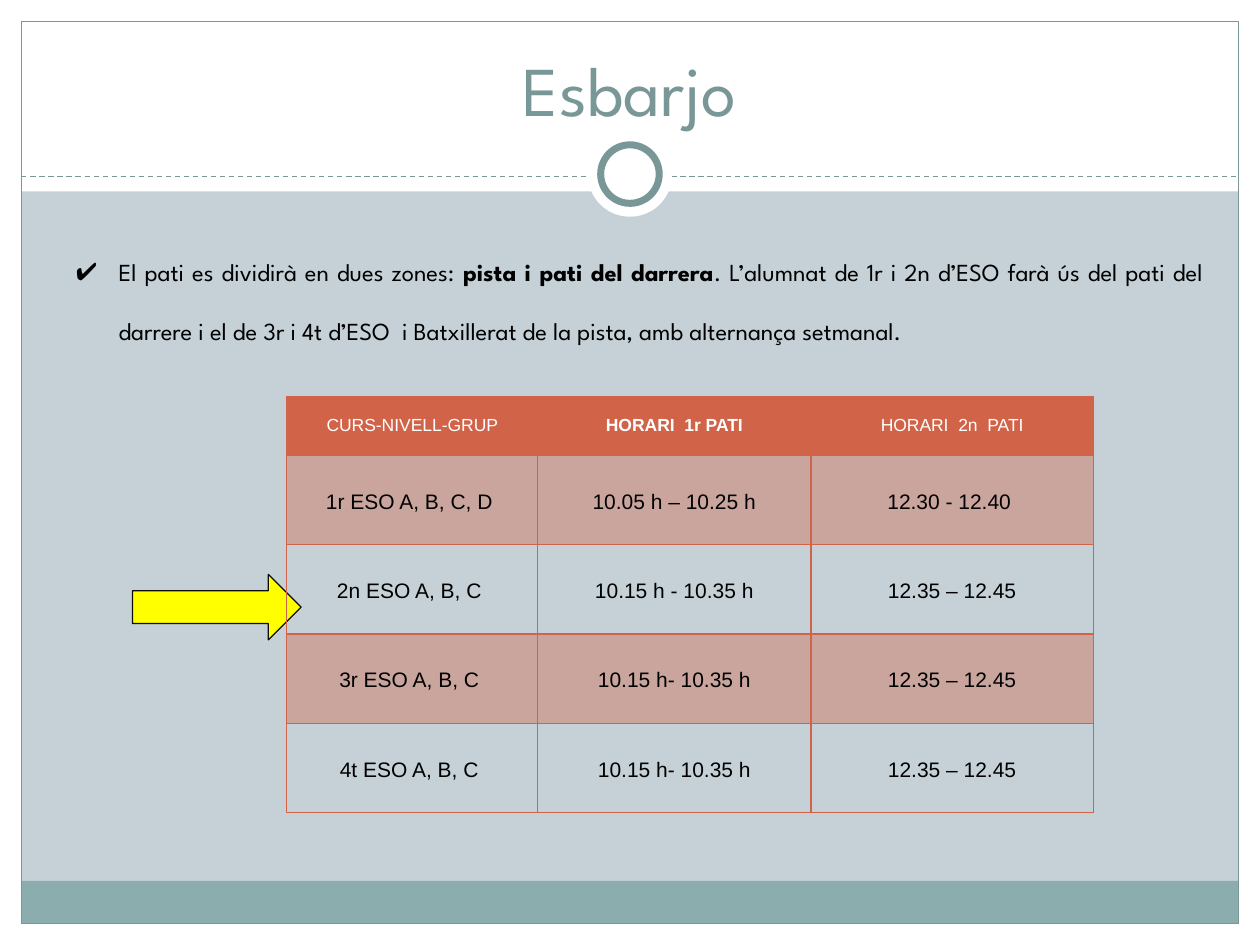
from lxml.etree import SubElement
from pptx import Presentation
from pptx.dml.color import RGBColor
from pptx.enum.dml import MSO_LINE
from pptx.enum.shapes import MSO_CONNECTOR, MSO_SHAPE
from pptx.enum.text import MSO_ANCHOR, PP_ALIGN
from pptx.oxml.ns import qn
from pptx.util import Cm, Pt

COLORS = {
    "background": "C5D1D7", "white": "FFFFFF", "teal": "7A9798", "footer": "8CADAE",
    "black": "000000", "yellow": "FFFF00", "outline": "0C0C0C", "accent": "D16349",
}
HEADING_FONT = "League Spartan"
TABLE_FONT = "Arial"
WIDTH, HEIGHT, MARGIN = 25.4, 19.05, 0.43

HEADERS = ["CURS-NIVELL-GRUP", "HORARI  1r PATI", "HORARI  2n  PATI"]
ROWS = [
    ["1r ESO A, B, C, D ", "10.05 h – 10.25 h", "12.30 - 12.40 "],
    ["2n ESO A, B, C ", "10.15 h - 10.35 h", "12.35 – 12.45"],
    ["3r ESO A, B, C ", "10.15 h- 10.35 h", "12.35 – 12.45"],
    ["4t ESO A, B, C ", "10.15 h- 10.35 h", "12.35 – 12.45"],
]


def color(name):
    return RGBColor.from_string(COLORS[name])


def add_span(para, text, font, size, fill, bold=False):
    span = para.add_run()
    span.text = text
    span.font.name, span.font.size, span.font.bold = font, Pt(size), bold
    span.font.color.rgb = color(fill)


def add_figure(page, kind, left, top, width, height, fill=None, line=None, weight=0.75):
    figure = page.shapes.add_shape(kind, Cm(left), Cm(top), Cm(width), Cm(height))
    figure.shadow.inherit = False
    if fill:
        figure.fill.solid()
        figure.fill.fore_color.rgb = color(fill)
    else:
        figure.fill.background()
    if line:
        figure.line.color.rgb = color(line)
        figure.line.width = Pt(weight)
    else:
        figure.line.fill.background()


def add_dashed_line(page, left, right, top):
    line = page.shapes.add_connector(
        MSO_CONNECTOR.STRAIGHT, Cm(left), Cm(top), Cm(right), Cm(top))
    line.line.color.rgb = color("teal")
    line.line.width = Pt(0.75)
    line.line.dash_style = MSO_LINE.DASH
    SubElement(line.element.spPr, qn("a:effectLst"))


def add_decoration(page):
    # White margins around the page
    for box in [
        (0, HEIGHT - MARGIN, WIDTH, MARGIN), (0, 0, WIDTH, 3.86),
        (0, 0, MARGIN, HEIGHT), (WIDTH - MARGIN, 0, MARGIN, HEIGHT),
    ]:
        add_figure(page, MSO_SHAPE.RECTANGLE, *box, fill="white")
    # Footer band, frame and divider with its ring
    inner_width = WIDTH - 2 * MARGIN
    add_figure(page, MSO_SHAPE.RECTANGLE, MARGIN, 17.76, inner_width, 0.86, fill="footer")
    add_figure(page, MSO_SHAPE.RECTANGLE, MARGIN, MARGIN, inner_width,
               HEIGHT - 2 * MARGIN, line="teal")
    add_dashed_line(page, MARGIN, WIDTH - MARGIN, 3.56)
    add_figure(page, MSO_SHAPE.OVAL, 11.85, 2.67, 1.7, 1.7, fill="white")
    add_figure(page, MSO_SHAPE.OVAL, 12.11, 2.92, 1.18, 1.18,
               fill="white", line="teal", weight=4)


def add_title(page, text):
    title = page.shapes.title
    title.left, title.top, title.width, title.height = Cm(0.84), Cm(0.64), Cm(23.7), Cm(2.11)
    title.text_frame.vertical_anchor = MSO_ANCHOR.BOTTOM
    para = title.text_frame.paragraphs[0]
    para.alignment = PP_ALIGN.CENTER
    add_span(para, text, HEADING_FONT, 40, "teal")
    # Bring the title in front of the decoration
    title.element.getparent().append(title.element)


def add_check_item(page, left, top, width, height, spans):
    box = page.shapes.add_textbox(Cm(left), Cm(top), Cm(width), Cm(height))
    box.text_frame.word_wrap = True
    para = box.text_frame.paragraphs[0]
    para.alignment, para.line_spacing = PP_ALIGN.JUSTIFY, 2.0
    properties = para._p.get_or_add_pPr()
    properties.set("marL", str(Cm(1.25)))
    properties.set("indent", str(Cm(-0.86)))
    bullet_color = SubElement(properties, qn("a:buClr"))
    SubElement(bullet_color, qn("a:srgbClr"), val=COLORS["black"])
    SubElement(properties, qn("a:buFont"), typeface=TABLE_FONT)
    SubElement(properties, qn("a:buChar"), char="✔")
    for text, bold in spans:
        add_span(para, text, HEADING_FONT, 14, "black", bold)


def add_borders(cell):
    properties = cell._tc.get_or_add_tcPr()
    for side in ("lnL", "lnR", "lnT", "lnB"):
        border = SubElement(properties, qn(f"a:{side}"), w=str(Pt(0.75)))
        fill = SubElement(border, qn("a:solidFill"))
        SubElement(fill, qn("a:srgbClr"), val=COLORS["accent"])


def format_cell(cell, text, size, font_color, bold=False, opacity=100, spacing=1.0):
    add_borders(cell)
    cell.margin_left = cell.margin_right = Cm(0.18)
    cell.margin_top = cell.margin_bottom = 0
    cell.vertical_anchor = MSO_ANCHOR.MIDDLE
    if opacity:
        cell.fill.solid()
        cell.fill.fore_color.rgb = color("accent")
        tint = cell._tc.tcPr.find(qn("a:solidFill")).find(qn("a:srgbClr"))
        SubElement(tint, qn("a:alpha"), val=str(opacity * 1000))
    else:
        cell.fill.background()
    para = cell.text_frame.paragraphs[0]
    para.alignment, para.line_spacing = PP_ALIGN.CENTER, spacing
    add_span(para, text, TABLE_FONT, size, font_color, bold)


def add_timetable(page, left, top, widths, header_height, row_height):
    frame = page.shapes.add_table(
        len(ROWS) + 1, len(HEADERS), Cm(left), Cm(top), Cm(sum(widths)),
        Cm(header_height + row_height * len(ROWS)))
    table = frame.table
    table.first_row = table.horz_banding = False
    for column, width in zip(table.columns, widths):
        column.width = Cm(width)
    for index, row in enumerate(table.rows):
        row.height = Cm(row_height if index else header_height)
    for column, text in enumerate(HEADERS):
        format_cell(table.cell(0, column), text, 10, "white", bold=column == 1)
    # Odd rows are tinted, even rows are clear
    for index, texts in enumerate(ROWS, start=1):
        for column, text in enumerate(texts):
            format_cell(table.cell(index, column), text, 12, "black",
                        opacity=40 * (index % 2), spacing=1.15)


def main():
    deck = Presentation()
    deck.slide_width, deck.slide_height = Cm(WIDTH), Cm(HEIGHT)
    page = deck.slides.add_slide(deck.slide_layouts[5])
    page.background.fill.solid()
    page.background.fill.fore_color.rgb = color("background")

    add_decoration(page)
    add_title(page, "Esbarjo")
    add_check_item(page, 0.89, 4.47, 23.62, 12.7, [
        ("El pati es dividirà en dues zones: ", False),
        ("pista i pati del darrera", True),
        (". L’alumnat de 1r i 2n d’ESO farà ús del pati del darrere i el de 3r i 4t "
         "d’ESO  i Batxillerat de la pista, amb alternança setmanal. ", False),
    ])
    # Pointer to the second row, then the timetable over its tip
    add_figure(page, MSO_SHAPE.RIGHT_ARROW, 2.67, 11.58, 3.4, 1.32,
               fill="yellow", line="outline")
    add_timetable(page, 5.78, 7.99, [5.06, 5.51, 5.69], 1.19, 1.8)
    deck.save("out.pptx")


if __name__ == "__main__":
    main()
